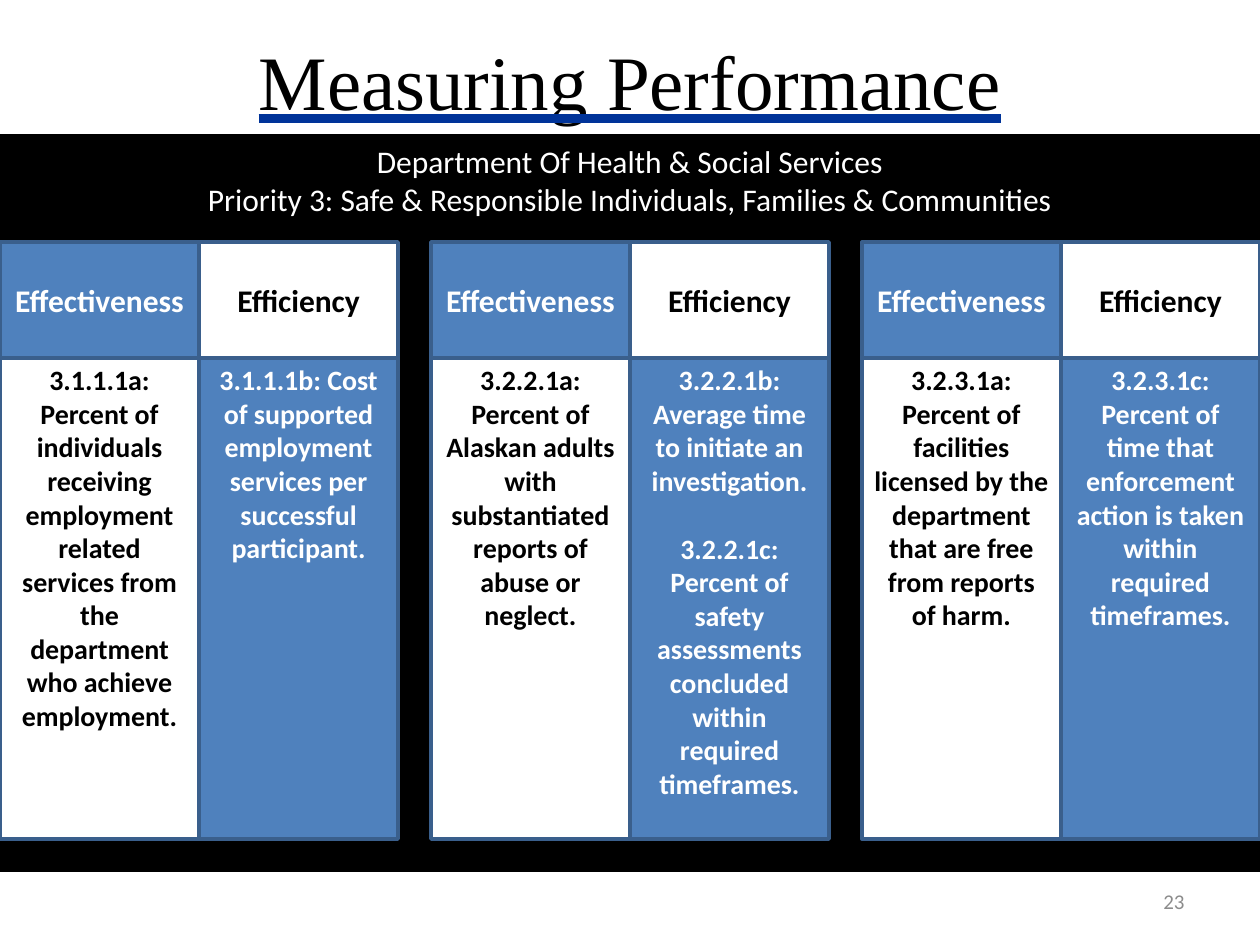
"""Build the Measuring Performance slide."""
from dataclasses import dataclass

from lxml import etree
from pptx import Presentation
from pptx.dml.color import RGBColor
from pptx.enum.shapes import MSO_SHAPE
from pptx.enum.text import MSO_ANCHOR, MSO_TEXT_UNDERLINE_TYPE, PP_ALIGN
from pptx.oxml.ns import qn
from pptx.util import Inches, Pt

RECTANGLE = MSO_SHAPE.RECTANGLE
TOP, MIDDLE = MSO_ANCHOR.TOP, MSO_ANCHOR.MIDDLE
CENTER, RIGHT = PP_ALIGN.CENTER, PP_ALIGN.RIGHT
HEAVY_UNDERLINE = MSO_TEXT_UNDERLINE_TYPE.HEAVY_LINE


@dataclass(frozen=True)
class Theme:
    """Colours, fonts and type sizes of the slide."""
    black: str = "000000"
    white: str = "FFFFFF"
    blue: str = "4F81BD"
    border: str = "3A5F8C"
    underline: str = "003399"
    grey: str = "8C8C8C"
    title_font: str = "Times New Roman"
    body_font: str = "Calibri"
    title_size: int = 44
    heading_size: int = 18
    measure_size: int = 16
    number_size: int = 12
    line_width: int = 2
    measure_gap: float = 19.5


THEME = Theme()
COLUMN_WIDTH = 1.58
PAIR_PITCH = 3.42
HEADING_TOP, HEADING_HEIGHT = 1.92, 0.92
MEASURE_TOP, MEASURE_HEIGHT = 2.83, 3.83

MEASURE_PAIRS = [
    (["3.1.1.1a: Percent of individuals receiving employment related services "
      "from the department who achieve employment."],
     ["3.1.1.1b: Cost of supported employment services per successful participant."]),
    (["3.2.2.1a: Percent of Alaskan adults with substantiated reports of abuse or neglect."],
     ["3.2.2.1b: Average time to initiate an investigation.",
      "3.2.2.1c: Percent of safety assessments concluded within required timeframes."]),
    (["3.2.3.1a: Percent of facilities licensed by the department that are free "
      "from reports of harm."],
     ["3.2.3.1c: Percent of time that enforcement action is taken within required timeframes."]),
]


def write_text(frame, lines, size, color, font=THEME.body_font, bold=False,
               align=CENTER, anchor=MIDDLE, gap=0):
    """Write one paragraph per line and return the last run."""
    frame.word_wrap = True
    frame.vertical_anchor = anchor
    for index, line in enumerate(lines):
        paragraph = frame.add_paragraph() if index else frame.paragraphs[0]
        paragraph.alignment = align
        if index and gap:
            paragraph.space_before = Pt(gap)
        run = paragraph.add_run()
        run.text = line
        run.font.size = Pt(size)
        run.font.bold = bold
        run.font.color.rgb = RGBColor.from_string(color)
        run.font.name = font
    return run


def add_panel(slide, box, fill, border):
    """Add a filled, outlined rectangle and return its text frame."""
    panel = slide.shapes.add_shape(RECTANGLE, *map(Inches, box))
    panel.shadow.inherit = False
    panel.fill.solid()
    panel.fill.fore_color.rgb = RGBColor.from_string(fill)
    panel.line.color.rgb = RGBColor.from_string(border)
    panel.line.width = Pt(THEME.line_width)
    return panel.text_frame


def add_label(slide, box, text, size, color, **style):
    """Add a text box with one line and return its run."""
    label = slide.shapes.add_textbox(*map(Inches, box))
    return write_text(label.text_frame, [text], size, color, **style)


def underline_in_color(run, color):
    """Give a run a heavy underline in its own colour."""
    run.font.underline = HEAVY_UNDERLINE
    underline_fill = etree.Element(qn("a:uFill"))
    solid = etree.SubElement(underline_fill, qn("a:solidFill"))
    etree.SubElement(solid, qn("a:srgbClr"), val=color)
    run.font._element.find(qn("a:solidFill")).addnext(underline_fill)


def add_column(slide, left, heading, measures, heading_colors, measure_colors):
    """Add a heading cell above its cell of measures."""
    heading_fill, heading_ink = heading_colors
    measure_fill, measure_ink = measure_colors
    measure_cell = add_panel(slide, (left, MEASURE_TOP, COLUMN_WIDTH, MEASURE_HEIGHT),
                             measure_fill, THEME.border)
    write_text(measure_cell, measures, THEME.measure_size, measure_ink, bold=True,
               anchor=TOP, gap=THEME.measure_gap)
    heading_cell = add_panel(slide, (left, HEADING_TOP, COLUMN_WIDTH, HEADING_HEIGHT),
                             heading_fill, THEME.border)
    write_text(heading_cell, [heading], THEME.heading_size, heading_ink, bold=True)


def main():
    """Build and save the slide."""
    deck = Presentation()
    deck.slide_width, deck.slide_height = Inches(10), Inches(7.5)
    slide = deck.slides.add_slide(deck.slide_layouts[6])

    title = add_label(slide, (0.5, 0.17, 9, 0.92), "Measuring Performance",
                      THEME.title_size, THEME.black, font=THEME.title_font)
    underline_in_color(title, THEME.underline)

    department = add_panel(slide, (0, 1.08, 10, 5.83), THEME.black, THEME.black)
    write_text(department,
               ["Department Of Health & Social Services",
                "Priority 3: Safe & Responsible Individuals, Families & Communities"],
               THEME.heading_size, THEME.white, anchor=TOP)

    on_blue = (THEME.blue, THEME.white)
    on_white = (THEME.white, THEME.black)
    for index, (effectiveness, efficiency) in enumerate(MEASURE_PAIRS):
        left = index * PAIR_PITCH
        add_column(slide, left + COLUMN_WIDTH, "Efficiency", efficiency, on_white, on_blue)
        add_column(slide, left, "Effectiveness", effectiveness, on_blue, on_white)

    add_label(slide, (7.17, 6.95, 2.33, 0.4), "23", THEME.number_size, THEME.grey, align=RIGHT)
    deck.save("out.pptx")


if __name__ == "__main__":
    main()
